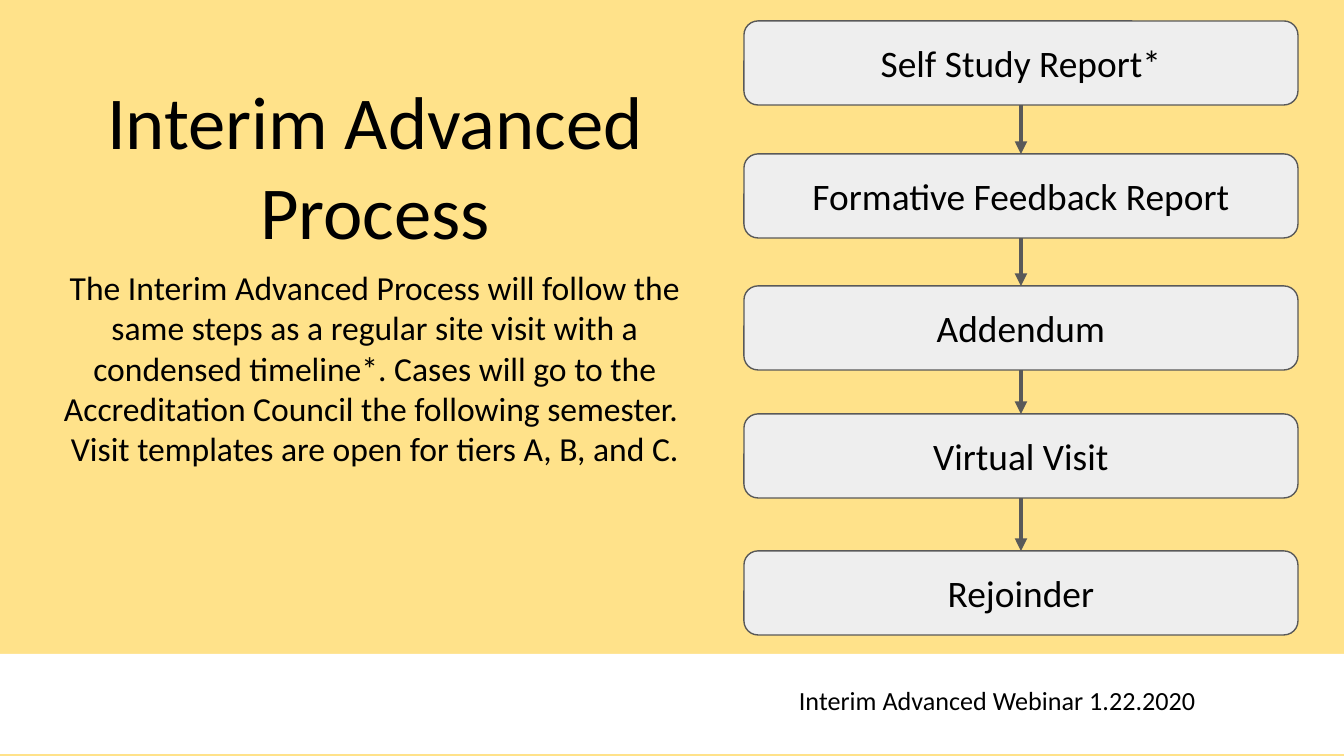
from itertools import pairwise

from lxml.etree import SubElement
from pptx import Presentation
from pptx.dml.color import RGBColor
from pptx.enum.shapes import MSO_CONNECTOR, MSO_SHAPE
from pptx.enum.text import MSO_ANCHOR, PP_ALIGN
from pptx.oxml.ns import qn
from pptx.util import Emu, Pt

TITLE = "Interim Advanced Process"
BODY = (
    "The Interim Advanced Process will follow the same steps as a regular site "
    "visit with a condensed timeline*. Cases will go to the Accreditation Council "
    "the following semester.  Visit templates are open for tiers A, B, and C."
)
FOOTER = "Interim Advanced Webinar 1.22.2020"
# Label and top edge of each step
STEPS = [
    ("Self Study Report*", 21),
    ("Formative Feedback Report", 154),
    ("Addendum", 286),
    ("Virtual Visit", 414),
    ("Rejoinder", 551),
]

PAGE_WIDTH, PAGE_HEIGHT = 1344, 756
STEP_LEFT, STEP_WIDTH, STEP_HEIGHT = 744, 554, 84
TEXT_LEFT, TEXT_WIDTH = 46, 658
BAND_TOP, BAND_HEIGHT = 654, 100
INSET = 13
FONT = "Calibri"
YELLOW, WHITE, BLACK = "FFE28A", "FFFFFF", "000000"
LIGHT_GREY, DARK_GREY = "EEEEEE", "595959"


def px(length):
    return Emu(round(length * 914400 / 134.4))


def color(value):
    return RGBColor.from_string(value)


def write(shape, text, size, align=PP_ALIGN.CENTER, anchor=MSO_ANCHOR.TOP):
    frame = shape.text_frame
    frame.word_wrap = True
    frame.vertical_anchor = anchor
    frame.margin_left = frame.margin_right = px(INSET)
    frame.margin_top = frame.margin_bottom = px(INSET)
    paragraph = frame.paragraphs[0]
    paragraph.text = text
    paragraph.alignment = align
    paragraph.font.name = FONT
    paragraph.font.size = Pt(size)
    paragraph.font.color.rgb = color(BLACK)


def add_text(page, bounds, text, size, align=PP_ALIGN.CENTER):
    box = page.shapes.add_textbox(*map(px, bounds))
    write(box, text, size, align)


def add_panel(page, kind, bounds, fill):
    panel = page.shapes.add_shape(kind, *map(px, bounds))
    panel.shadow.inherit = False
    panel.fill.solid()
    panel.fill.fore_color.rgb = color(fill)
    panel.line.fill.background()
    return panel


def add_step(page, label, top):
    bounds = (STEP_LEFT, top, STEP_WIDTH, STEP_HEIGHT)
    step = add_panel(page, MSO_SHAPE.ROUNDED_RECTANGLE, bounds, LIGHT_GREY)
    step.line.color.rgb = color(DARK_GREY)
    step.line.width = Pt(0.75)
    write(step, label, 20, anchor=MSO_ANCHOR.MIDDLE)


def add_arrow(page, start, end):
    """Draw a downward arrow on the centre line of the steps."""
    middle = STEP_LEFT + STEP_WIDTH / 2
    arrow = page.shapes.add_connector(
        MSO_CONNECTOR.STRAIGHT, px(middle), px(start), px(middle), px(end)
    )
    arrow.line.color.rgb = color(DARK_GREY)
    arrow.line.width = Pt(2.25)
    properties = arrow._element.spPr
    SubElement(properties.find(qn("a:ln")), qn("a:tailEnd"), type="triangle")
    SubElement(properties, qn("a:effectLst"))


def main():
    deck = Presentation()
    deck.slide_width, deck.slide_height = px(PAGE_WIDTH), px(PAGE_HEIGHT)
    page = deck.slides.add_slide(deck.slide_layouts[6])
    page.background.fill.solid()
    page.background.fill.fore_color.rgb = color(YELLOW)

    band = (0, BAND_TOP, PAGE_WIDTH, BAND_HEIGHT)
    add_panel(page, MSO_SHAPE.RECTANGLE, band, WHITE)
    add_text(page, (786, 671, 512, 58), FOOTER, 14, PP_ALIGN.LEFT)
    add_text(page, (TEXT_LEFT, 62, TEXT_WIDTH, 85), TITLE, 40)
    add_text(page, (TEXT_LEFT, 254, TEXT_WIDTH, 347), BODY, 18)

    for label, top in STEPS:
        add_step(page, label, top)
    for (_, top), (_, next_top) in pairwise(STEPS):
        add_arrow(page, top + STEP_HEIGHT, next_top)

    deck.save("out.pptx")


if __name__ == "__main__":
    main()
